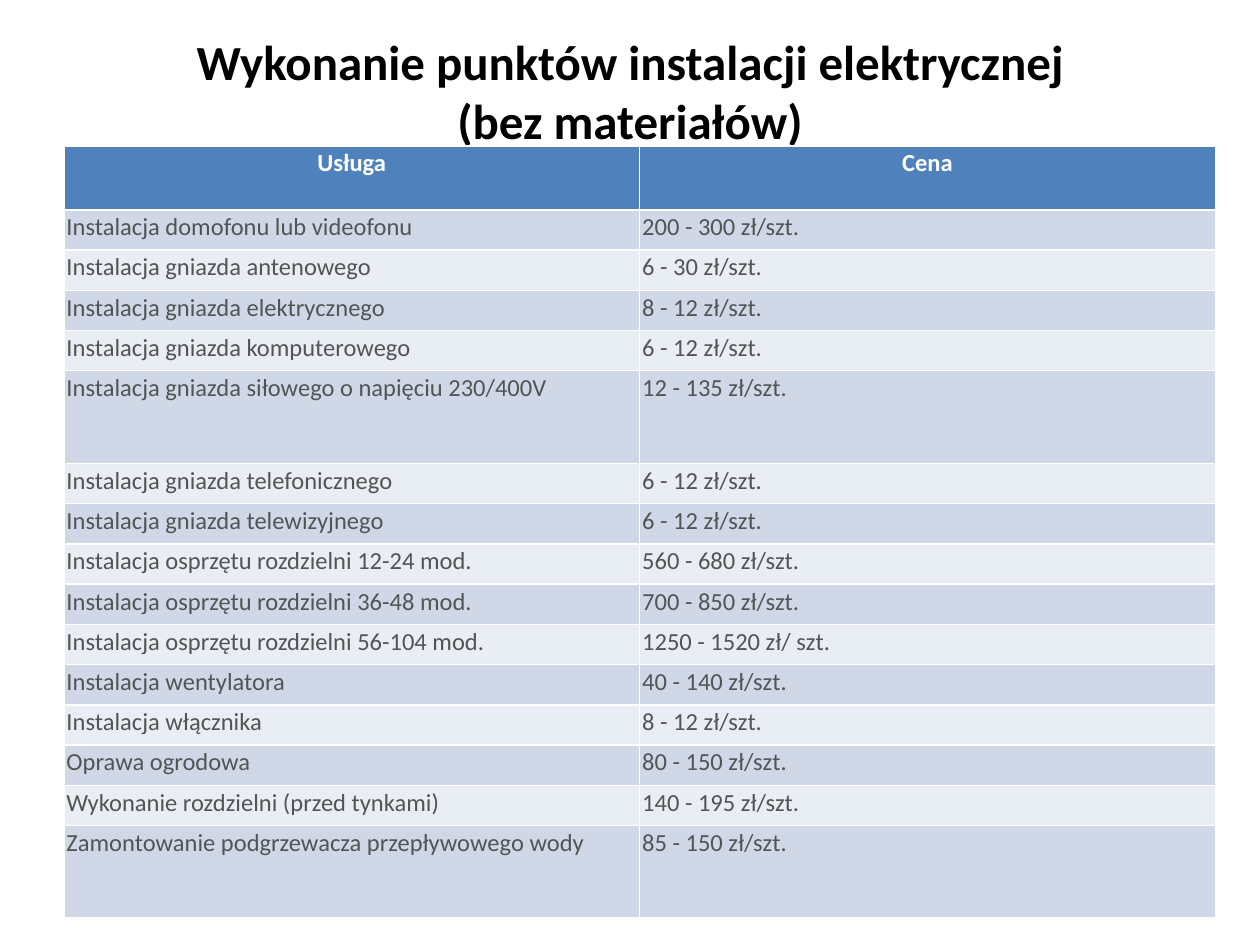
from pptx import Presentation
from pptx.dml.color import RGBColor
from pptx.enum import text
from pptx.util import Pt

BLACK = RGBColor(0x00, 0x00, 0x00)
WHITE = RGBColor(0xFF, 0xFF, 0xFF)
GREY = RGBColor(0x52, 0x54, 0x55)
HEADER_BLUE = RGBColor(0x4F, 0x81, 0xBD)
BANDS = (RGBColor(0xD0, 0xD8, 0xE8), RGBColor(0xE9, 0xED, 0xF4))

TITLE = "Wykonanie punktów instalacji elektrycznej\v(bez materiałów)"
HEADINGS = ("Usługa", "Cena")
PRICES = [
    ("Instalacja domofonu lub videofonu", "200 - 300 zł/szt."),
    ("Instalacja gniazda antenowego", "6 - 30 zł/szt."),
    ("Instalacja gniazda elektrycznego", "8 - 12 zł/szt."),
    ("Instalacja gniazda komputerowego", "6 - 12 zł/szt."),
    ("Instalacja gniazda siłowego o napięciu 230/400V", "12 - 135 zł/szt."),
    ("Instalacja gniazda telefonicznego", "6 - 12 zł/szt."),
    ("Instalacja gniazda telewizyjnego", "6 - 12 zł/szt."),
    ("Instalacja osprzętu rozdzielni 12-24 mod.", "560 - 680 zł/szt."),
    ("Instalacja osprzętu rozdzielni 36-48 mod.", "700 - 850 zł/szt."),
    ("Instalacja osprzętu rozdzielni 56-104 mod.", "1250 - 1520 zł/ szt."),
    ("Instalacja wentylatora", "40 - 140 zł/szt."),
    ("Instalacja włącznika", "8 - 12 zł/szt."),
    ("Oprawa ogrodowa", "80 - 150 zł/szt."),
    ("Wykonanie rozdzielni (przed tynkami)", "140 - 195 zł/szt."),
    ("Zamontowanie podgrzewacza przepływowego wody", "85 - 150 zł/szt."),
]
HEADER_HEIGHT, ROW_HEIGHT, TALL_HEIGHT = 36.5, 23, 53
TALL_ROWS = (5, 15)

TITLE_FRAME = {
    "word_wrap": True,
    "auto_size": text.MSO_AUTO_SIZE.NONE,
    "vertical_anchor": text.MSO_ANCHOR.MIDDLE,
    "margin_top": Pt(0),
    "margin_bottom": Pt(30),
}
CELL_FORMAT = {
    "vertical_anchor": text.MSO_ANCHOR.TOP,
    **{f"margin_{side}": Pt(1.5) for side in ("left", "top", "right", "bottom")},
}
TITLE_FONT = {"name": "Calibri", "size": Pt(28), "bold": True}
HEADER_FONT = {"name": "Calibri", "size": Pt(14), "bold": True}
BODY_FONT = {**HEADER_FONT, "bold": False}


def set_format(target, values):
    for name, value in values.items():
        setattr(target, name, value)


def write(frame, content, font, colour, alignment):
    frame.text = content
    paragraph = frame.paragraphs[0]
    paragraph.alignment = alignment
    for run in paragraph.runs:
        set_format(run.font, font)
        run.font.color.rgb = colour


def place_title(slide, left, top, width, height):
    title = slide.shapes.title
    set_format(title, {"left": Pt(left), "top": Pt(top), "width": Pt(width), "height": Pt(height)})
    write(title.text_frame, TITLE, TITLE_FONT, BLACK, text.PP_ALIGN.CENTER)
    set_format(title.text_frame, TITLE_FRAME)


def row_height(index):
    if index == 0:
        return HEADER_HEIGHT
    return TALL_HEIGHT if index in TALL_ROWS else ROW_HEIGHT


def place_price_table(slide, left, top, width):
    rows = [HEADINGS, *PRICES]
    heights = [row_height(index) for index in range(len(rows))]
    table = slide.shapes.add_table(
        len(rows), len(HEADINGS), Pt(left), Pt(top), Pt(width), Pt(sum(heights))
    ).table
    for column in table.columns:
        column.width = Pt(width / len(HEADINGS))
    for index, (values, height) in enumerate(zip(rows, heights)):
        table.rows[index].height = Pt(height)
        if index == 0:
            fill, style = HEADER_BLUE, (HEADER_FONT, WHITE, text.PP_ALIGN.CENTER)
        else:
            fill = BANDS[(index - 1) % 2]
            style = (BODY_FONT, GREY, text.PP_ALIGN.LEFT)
        for cell, value in zip(table.rows[index].cells, values):
            set_format(cell, CELL_FORMAT)
            cell.fill.solid()
            cell.fill.fore_color.rgb = fill
            write(cell.text_frame, value, *style)


def main():
    presentation = Presentation()
    set_format(presentation, {"slide_width": Pt(720), "slide_height": Pt(540)})
    slide = presentation.slides.add_slide(presentation.slide_layouts[5])
    place_title(slide, 36, 21.6, 648, 90)
    place_price_table(slide, 36.5, 83.4, 658)
    presentation.save("out.pptx")


if __name__ == "__main__":
    main()
